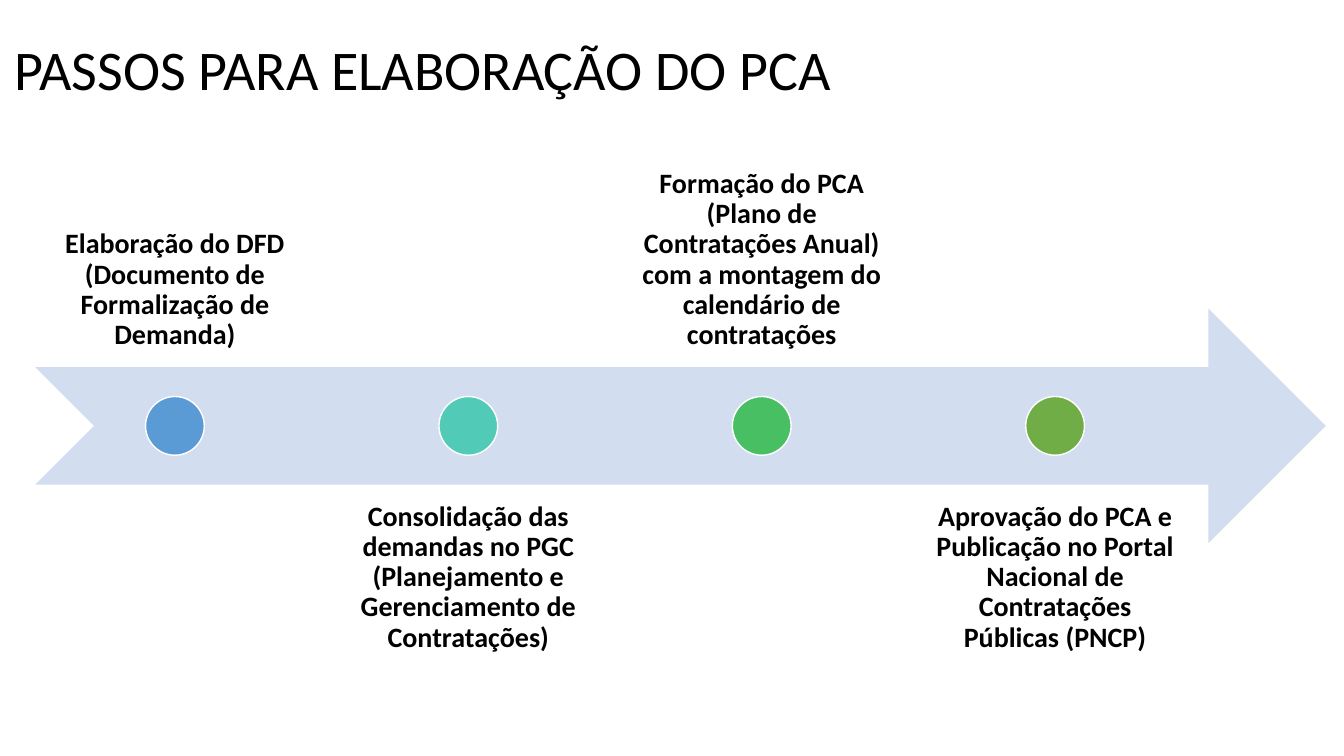
from pptx import Presentation
from pptx.dml.color import RGBColor
from pptx.enum.shapes import MSO_SHAPE as Shape
from pptx.enum.text import MSO_ANCHOR as Anchor, PP_ALIGN as Align
from pptx.util import Inches, Pt

COLORS = {
    "text": "000000",
    "arrow": "D2DEEF",
    "outline": "FFFFFF",
    "blue": "5B9BD5",
    "teal": "52CAB8",
    "green": "49BF64",
    "olive": "70AD47",
}

STEPS = [
    ("Elaboração do DFD (Documento de Formalização de Demanda)", "blue"),
    ("Consolidação das demandas no PGC (Planejamento e Gerenciamento de Contratações)", "teal"),
    ("Formação do PCA (Plano de Contratações Anual) com a montagem do calendário de contratações", "green"),
    ("Aprovação do PCA e Publicação no Portal Nacional de Contratações Públicas (PNCP)", "olive"),
]

prs = Presentation()
prs.slide_width = Inches(13.33)
prs.slide_height = Inches(7.5)
slide = prs.slides.add_slide(prs.slide_layouts[6])


def add_filled(kind, left, top, width, height, color):
    shape = slide.shapes.add_shape(kind, Inches(left), Inches(top), Inches(width), Inches(height))
    shape.shadow.inherit = False
    shape.fill.solid()
    shape.fill.fore_color.rgb = RGBColor.from_string(COLORS[color])
    shape.line.fill.background()
    return shape


def add_text(left, top, width, height, text, size, bold=False):
    """Add a box with one centred paragraph and return its text frame."""
    box = slide.shapes.add_textbox(Inches(left), Inches(top), Inches(width), Inches(height))
    paragraph = box.text_frame.paragraphs[0]
    paragraph.alignment = Align.CENTER
    run = paragraph.add_run()
    run.text = text
    run.font.name = "Calibri"
    run.font.size = Pt(size)
    run.font.bold = bold
    run.font.color.rgb = RGBColor.from_string(COLORS["text"])
    return box.text_frame


arrow_left, arrow_top, arrow_height = 0.35, 3.06, 2.33
label_width, step_pitch = 2.77, 2.91
label_inset = Inches(0.16)
dot_size = arrow_height / 4

add_filled(Shape.NOTCHED_RIGHT_ARROW, arrow_left, arrow_top, 12.8, arrow_height, "arrow")

# Labels alternate above and below the arrow
for index, (step, color) in enumerate(STEPS):
    above = index % 2 == 0
    left = arrow_left + index * step_pitch
    label = add_text(left, 1.31 if above else 4.82, label_width, arrow_height, step, 20, bold=True)
    label.word_wrap = True
    label.vertical_anchor = Anchor.BOTTOM if above else Anchor.TOP
    label.margin_left = label.margin_right = label_inset
    label.margin_top = label.margin_bottom = label_inset
    label.paragraphs[0].line_spacing = 0.9

    dot_left = left + (label_width - dot_size) / 2
    dot_top = arrow_top + (arrow_height - dot_size) / 2
    dot = add_filled(Shape.OVAL, dot_left, dot_top, dot_size, dot_size, color)
    dot.line.color.rgb = RGBColor.from_string(COLORS["outline"])
    dot.line.width = Pt(1)

title = add_text(0, 0.29, 8.51, 0.77, "PASSOS PARA ELABORAÇÃO DO PCA ", 40)
title.word_wrap = False

prs.save("out.pptx")
